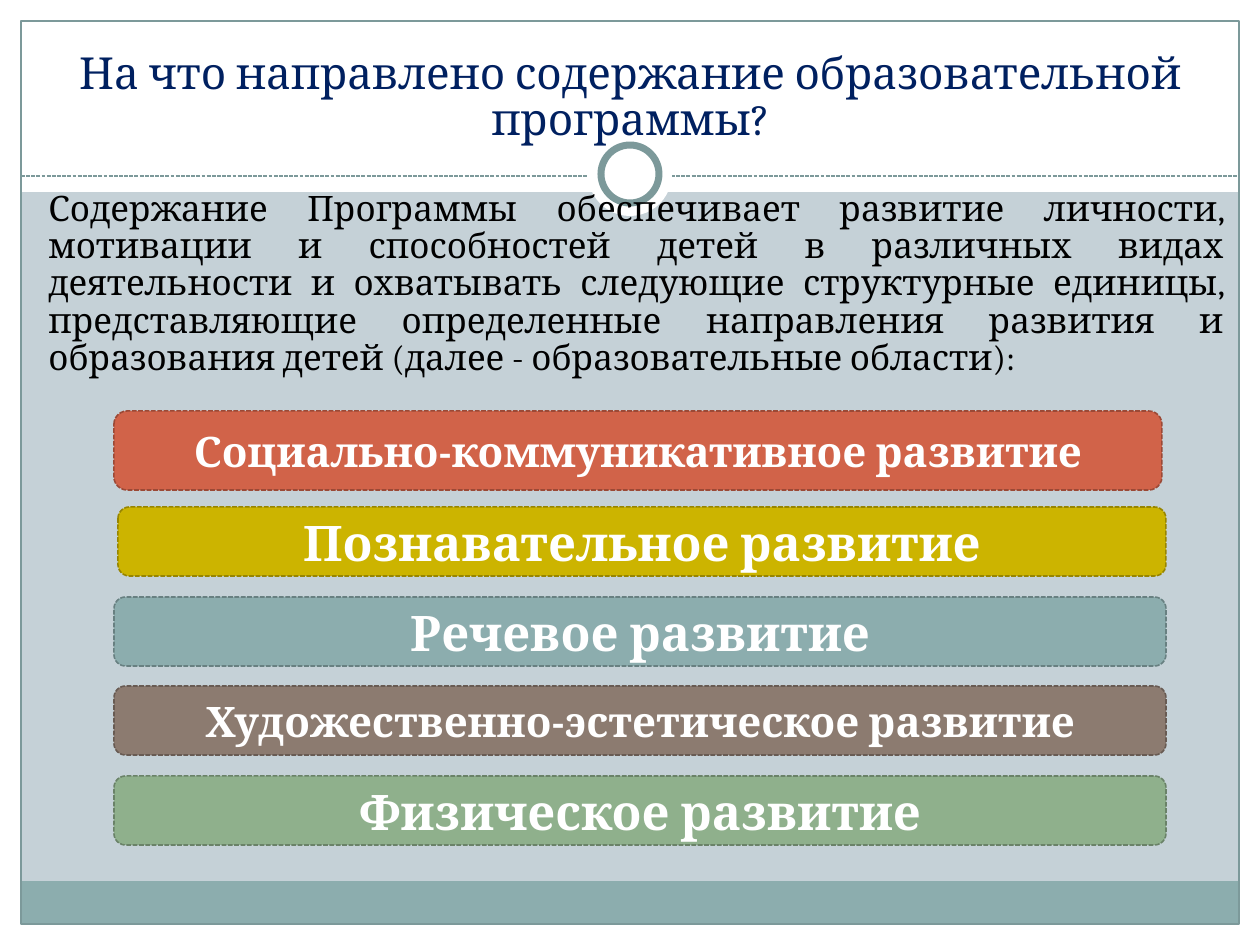
import pptx
import pptx.util
import pptx.dml.color
import pptx.enum.dml
import pptx.enum.shapes
import pptx.enum.text
import pptx.oxml
from dataclasses import dataclass

PX = 914400 / 126
PAGE_WIDTH, PAGE_HEIGHT = 1260, 945
SHAPE = pptx.enum.shapes.MSO_SHAPE
ALIGN = pptx.enum.text.PP_ALIGN
ANCHOR = pptx.enum.text.MSO_ANCHOR


@dataclass(frozen=True)
class Theme:
    font: str = "Cambria"
    background: str = "C5D1D7"
    white: str = "FFFFFF"
    black: str = "000000"
    title: str = "002060"
    band: str = "8CADAE"
    frame: str = "7C999A"
    title_size: float = 25.2
    body_size: float = 20
    large: float = 28
    medium: float = 24


THEME = Theme()

TITLE = "На что направлено содержание образовательной программы?"
BODY = (
    "Содержание Программы обеспечивает развитие личности, мотивации и способностей "
    "детей в различных видах деятельности и охватывать следующие структурные единицы, "
    "представляющие определенные направления развития и образования детей "
    "(далее - образовательные области):"
)

# Bounds, fill, outline, text size, text
AREAS = [
    ((114, 411, 1048, 79), "D16349", "9B4936", THEME.medium, "Социально-коммуникативное развитие"),
    ((118, 507, 1048, 69), "CCB400", "978500", THEME.large, "Познавательное развитие"),
    ((114, 597, 1052, 69), "8CADAE", "688081", THEME.large, "Речевое развитие"),
    ((114, 686, 1052, 69), "8C7B70", "685B53", THEME.medium, "Художественно-эстетическое развитие"),
    ((114, 776, 1052, 69), "8FB08C", "6A8268", THEME.large, "Физическое развитие"),
]


def px(length):
    return pptx.util.Emu(round(length * PX))


def rgb(color):
    return pptx.dml.color.RGBColor.from_string(color)


def style_line(line, color, width, dashed=False):
    line.color.rgb = rgb(color)
    line.width = pptx.util.Pt(width)
    if dashed:
        line.dash_style = pptx.enum.dml.MSO_LINE.SQUARE_DOT


def add_shape(page, kind, bounds, fill=None, outline=None, width=0.75, dashed=False):
    shape = page.shapes.add_shape(kind, *map(px, bounds))
    shape.shadow.inherit = False
    if fill:
        shape.fill.solid()
        shape.fill.fore_color.rgb = rgb(fill)
    else:
        shape.fill.background()
    if outline:
        style_line(shape.line, outline, width, dashed)
    else:
        shape.line.fill.background()
    return shape


def write(shape, text, size, color, align, bold=False, spacing=None):
    """Put one formatted paragraph in the shape and return it."""
    shape.text_frame.word_wrap = True
    shape.text_frame.text = text
    para = shape.text_frame.paragraphs[0]
    para.alignment = align
    if spacing:
        para.line_spacing = spacing
    font = para.runs[0].font
    font.name = THEME.font
    font.size = pptx.util.Pt(size)
    font.bold = bold
    font.color.rgb = rgb(color)
    return para


def add_divider(page, left, right, y):
    line = page.shapes.add_connector(
        pptx.enum.shapes.MSO_CONNECTOR.STRAIGHT, px(left), px(y), px(right), px(y))
    style_line(line.line, THEME.frame, 0.75, dashed=True)
    properties = line._element.spPr
    properties.append(properties.makeelement(pptx.oxml.ns.qn("a:effectLst"), {}))


def add_backdrop(page):
    page.background.fill.solid()
    page.background.fill.fore_color.rgb = rgb(THEME.background)
    margin = 21
    right, bottom = PAGE_WIDTH - margin, PAGE_HEIGHT - margin
    for bounds in [
        (0, bottom, PAGE_WIDTH, margin),
        (0, 0, PAGE_WIDTH, 192),
        (0, 0, margin, PAGE_HEIGHT),
        (right, 0, margin, PAGE_HEIGHT),
    ]:
        add_shape(page, SHAPE.RECTANGLE, bounds, THEME.white)
    add_shape(page, SHAPE.RECTANGLE, (margin, 881, right - margin, 43), THEME.band)
    add_shape(page, SHAPE.RECTANGLE, (margin, margin, right - margin, bottom - margin),
              outline=THEME.frame)
    add_divider(page, margin, right, 176)
    add_shape(page, SHAPE.OVAL, (588, 132, 84, 84), THEME.white)
    add_shape(page, SHAPE.OVAL, (601, 145, 58, 58), THEME.white, THEME.frame, 4)


def add_area(page, bounds, fill, outline, size, text):
    box = add_shape(page, SHAPE.ROUNDED_RECTANGLE, bounds, fill, outline, 0.9, dashed=True)
    box.text_frame.vertical_anchor = ANCHOR.MIDDLE
    write(box, text, size, THEME.white, ALIGN.CENTER, bold=True)


def add_title(page):
    box = page.shapes.add_textbox(*map(px, (25, 26, 1211, 119)))
    box.text_frame.vertical_anchor = ANCHOR.BOTTOM
    box.text_frame.margin_bottom = 0
    write(box, TITLE, THEME.title_size, THEME.title, ALIGN.CENTER, spacing=0.87)


def add_body(page):
    box = page.shapes.add_textbox(*map(px, (25, 185, 1211, 238)))
    para = write(box, BODY, THEME.body_size, THEME.black, ALIGN.JUSTIFY, spacing=0.89)
    para._p.get_or_add_pPr().set("marL", str(px(11)))


def main():
    deck = pptx.Presentation()
    deck.slide_width, deck.slide_height = px(PAGE_WIDTH), px(PAGE_HEIGHT)
    page = deck.slides.add_slide(deck.slide_layouts[6])
    add_backdrop(page)
    for area in AREAS:
        add_area(page, *area)
    add_title(page)
    add_body(page)
    deck.save("out.pptx")


if __name__ == "__main__":
    main()
